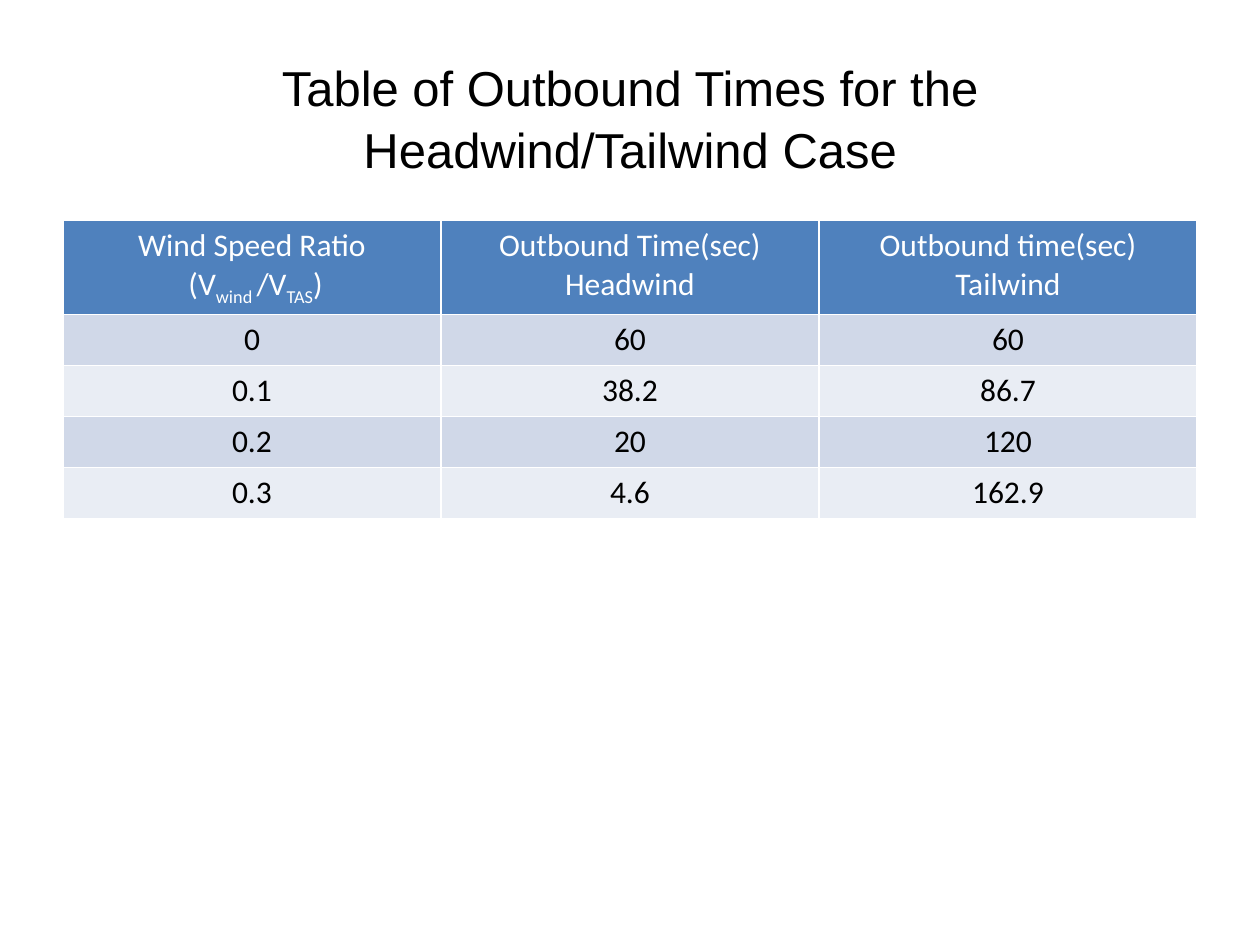
from dataclasses import dataclass

from pptx import Presentation
from pptx.dml.color import RGBColor
from pptx.enum import text
from pptx.util import Pt


@dataclass(frozen=True)
class Theme:
    black: RGBColor = RGBColor.from_string("000000")
    white: RGBColor = RGBColor.from_string("FFFFFF")
    header: RGBColor = RGBColor.from_string("4F81BD")
    bands: tuple = (RGBColor.from_string("D0D8E8"), RGBColor.from_string("E9EDF4"))
    title_font: str = "Arial"
    table_font: str = "Calibri"
    title_size: Pt = Pt(28)
    table_size: Pt = Pt(18)


theme = Theme()


def format_runs(paragraph, name, size, color):
    paragraph.alignment = text.PP_ALIGN.CENTER
    for run in paragraph.runs:
        run.font.name = name
        run.font.size = size
        run.font.bold = False
        run.font.color.rgb = color


presentation = Presentation()
presentation.slide_width, presentation.slide_height = Pt(720), Pt(540)
slide = presentation.slides.add_slide(presentation.slide_layouts[5])

title = slide.shapes.title
title.left, title.top, title.width, title.height = Pt(36), Pt(21.6), Pt(648), Pt(90)
title.text_frame.text = "Table of Outbound Times for the Headwind/Tailwind Case"
title.text_frame.vertical_anchor = text.MSO_ANCHOR.MIDDLE
title_paragraph = title.text_frame.paragraphs[0]
title_paragraph.line_spacing = 1.05
format_runs(title_paragraph, theme.title_font, theme.title_size, theme.black)

rows = [
    ["Wind Speed Ratio", "Outbound Time(sec)\nHeadwind", "Outbound time(sec)\nTailwind"],
    ["0", "60", "60"],
    ["0.1", "38.2", "86.7"],
    ["0.2", "20", "120"],
    ["0.3", "4.6", "162.9"],
]
ratio_parts = [(" (V", False), ("wind ", True), ("/V", False), ("TAS", True), (")", False)]
header_height, row_height = Pt(53.4), Pt(29.2)

table = slide.shapes.add_table(
    len(rows), len(rows[0]), Pt(36), Pt(126), Pt(648),
    header_height + row_height * (len(rows) - 1),
).table

ratio_paragraph = table.cell(0, 0).text_frame.add_paragraph()
for part, is_subscript in ratio_parts:
    run = ratio_paragraph.add_run()
    run.text = part
    if is_subscript:
        run.font._element.set("baseline", "-25000")

for row_index, values in enumerate(rows):
    is_header = row_index == 0
    table.rows[row_index].height = header_height if is_header else row_height
    fill_color = theme.header if is_header else theme.bands[(row_index - 1) % 2]
    text_color = theme.white if is_header else theme.black
    for column_index, value in enumerate(values):
        cell = table.cell(row_index, column_index)
        cell.fill.solid()
        cell.fill.fore_color.rgb = fill_color
        for line_index, line in enumerate(value.split("\n")):
            if line_index == 0:
                cell.text_frame.paragraphs[0].text = line
            else:
                cell.text_frame.add_paragraph().text = line
        for paragraph in cell.text_frame.paragraphs:
            format_runs(paragraph, theme.table_font, theme.table_size, text_color)

presentation.save("out.pptx")
